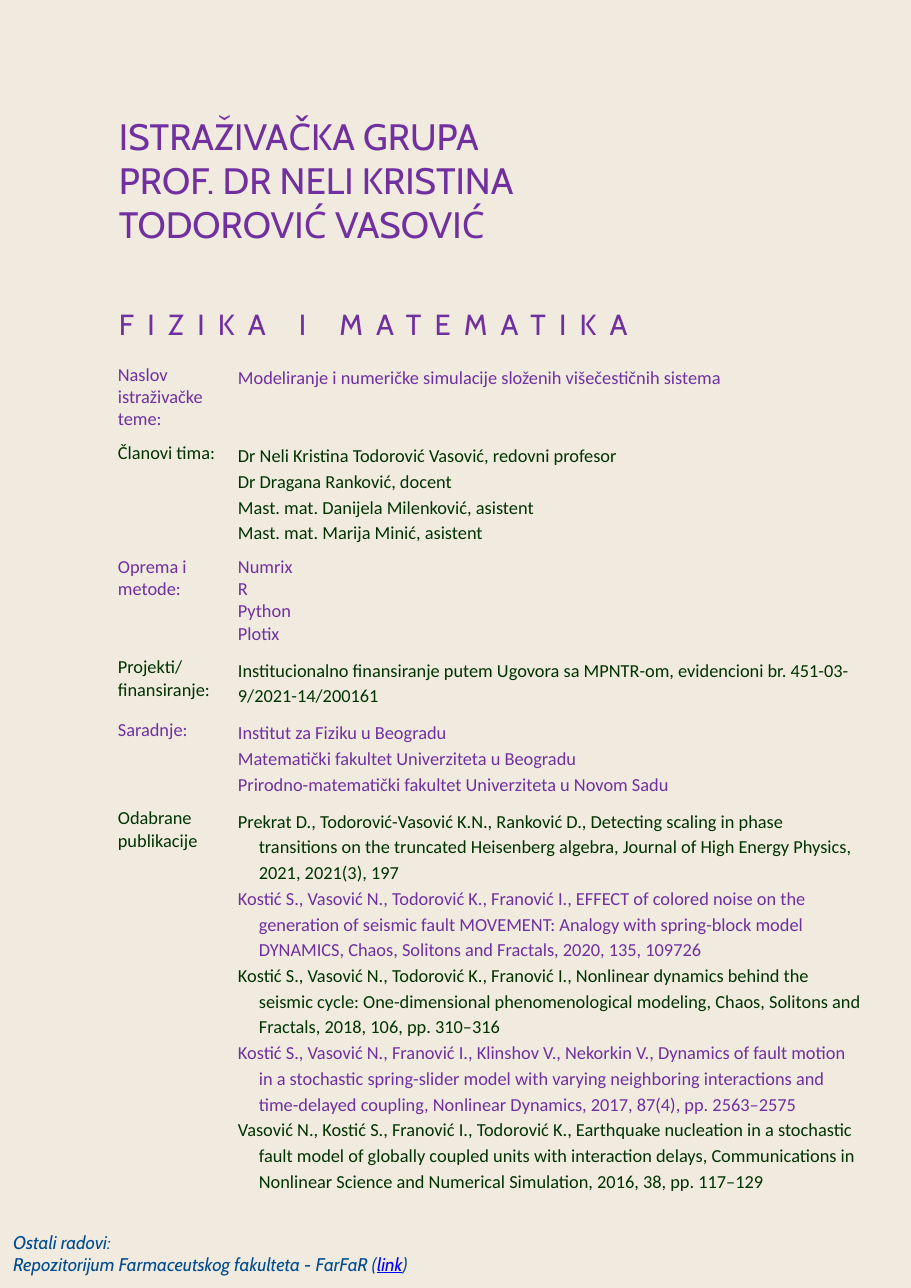
import pptx
import pptx.util
import pptx.enum.text
import pptx.dml.color
import pptx.oxml.ns
from lxml import etree

Inches = pptx.util.Inches
Pt = pptx.util.Pt
COLORS = {"paper": "F0EADF", "violet": "7030A0", "green": "003300",
          "blue": "024C90", "link": "0000FF"}
NO_GRID = "{2D5ABB26-0587-4C30-8999-92F81FD0307C}"


def style(para, size, face, color, slant=False):
    para.alignment = pptx.enum.text.PP_ALIGN.LEFT
    para.space_before = Pt(0)
    for run in para.runs:
        run.font.size = Pt(size)
        run.font.name = face
        run.font.italic = slant
        run.font.color.rgb = pptx.dml.color.RGBColor.from_string(COLORS[color])


def place(shape, left, top, width, height):
    shape.left, shape.top = Inches(left), Inches(top)
    shape.width, shape.height = Inches(width), Inches(height)
    frame = shape.text_frame
    frame.word_wrap = True
    frame.auto_size = pptx.enum.text.MSO_AUTO_SIZE.NONE
    frame.vertical_anchor = pptx.enum.text.MSO_ANCHOR.MIDDLE
    frame.margin_left = frame.margin_right = Inches(0.06)
    frame.margin_top = frame.margin_bottom = Inches(0.06)
    return frame


deck = pptx.Presentation()
deck.slide_width, deck.slide_height = Inches(8.27), Inches(11.69)
slide = deck.slides.add_slide(deck.slide_layouts[1])
back = slide.background.fill
back.solid()
back.fore_color.rgb = pptx.dml.color.RGBColor.from_string(COLORS["paper"])

title = place(slide.shapes.title, 1.02, 0.97, 4.3, 1.32)
title.text = "ISTRAŽIVAČKA GRUPA\vPROF. DR NELI KRISTINA\vTODOROVIĆ VASOVIĆ"
style(title.paragraphs[0], 24, "Cabin", "violet")

field = place(slide.placeholders[1], 1.02, 2.72, 5.22, 0.43)
field.text = "FIZIKA I MATEMATIKA"
para = field.paragraphs[0]
props = para._p.get_or_add_pPr()
props.set("marL", "0")
props.set("indent", "0")
etree.SubElement(props, pptx.oxml.ns.qn("a:buNone"))
style(para, 19, "Cabin", "violet")
para.runs[0]._r.get_or_add_rPr().set("spc", "870")

papers = [
    "Prekrat D., Todorović-Vasović K.N., Ranković D., Detecting scaling in phase transitions on the truncated Heisenberg algebra, Journal of High Energy Physics, 2021, 2021(3), 197",
    "Kostić S., Vasović N., Todorović K., Franović I., EFFECT of colored noise on the generation of seismic fault MOVEMENT: Analogy with spring-block model DYNAMICS, Chaos, Solitons and Fractals, 2020, 135, 109726",
    "Kostić S., Vasović N., Todorović K., Franović I., Nonlinear dynamics behind the seismic cycle: One-dimensional phenomenological modeling, Chaos, Solitons and Fractals, 2018, 106, pp. 310–316",
    "Kostić S., Vasović N., Franović I., Klinshov V., Nekorkin V., Dynamics of fault motion in a stochastic spring-slider model with varying neighboring interactions and time-delayed coupling, Nonlinear Dynamics, 2017, 87(4), pp. 2563–2575",
    "Vasović N., Kostić S., Franović I., Todorović K., Earthquake nucleation in a stochastic fault model of globally coupled units with interaction delays, Communications in Nonlinear Science and Numerical Simulation, 2016, 38, pp. 117–129",
]
rows = [
    ("Naslov istraživačke teme:", 0.71, 1.15,
     ["Modeliranje i numeričke simulacije složenih višečestičnih sistema"]),
    ("Članovi tima:", 1.03, 1.15,
     ["Dr Neli Kristina Todorović Vasović, redovni profesor",
      "Dr Dragana Ranković, docent",
      "Mast. mat. Danijela Milenković, asistent",
      "Mast. mat. Marija Minić, asistent"]),
    ("Oprema i metode:", 0.91, 1.0, ["Numrix", "R", "Python", "Plotix"]),
    ("Projekti/ finansiranje:", 0.57, 1.15,
     ["Institucionalno finansiranje putem Ugovora sa MPNTR-om, evidencioni br. 451-03-9/2021-14/200161"]),
    ("Saradnje:", 0.8, 1.15,
     ["Institut za Fiziku u Beogradu",
      "Matematički fakultet Univerziteta u Beogradu",
      "Prirodno-matematički fakultet Univerziteta u Novom Sadu"]),
    ("Odabrane publikacije", 3.6, 1.15, papers),
]
high = sum(row[1] for row in rows)
table = slide.shapes.add_table(len(rows), 2, Inches(1.02), Inches(3.25),
                               Inches(6.87), Inches(high)).table
table.first_row = table.horz_banding = False
table._tbl.tblPr.find(pptx.oxml.ns.qn("a:tableStyleId")).text = NO_GRID
table.columns[0].width, table.columns[1].width = Inches(1.09), Inches(5.78)

tones = ["violet", "green"]
for r, (label, tall, lead, lines) in enumerate(rows):
    table.rows[r].height = Inches(tall)
    for c, text in enumerate([label, "\n".join(lines)]):
        cell = table.cell(r, c)
        cell.fill.background()
        cell.margin_left = cell.margin_right = Inches(0.05)
        cell.margin_top = cell.margin_bottom = Inches(0.05)
        cell.text_frame.text = text
        for n, para in enumerate(cell.text_frame.paragraphs):
            cited = c == 1 and lines is papers
            if cited:
                props = para._p.get_or_add_pPr()
                props.set("marL", str(Inches(0.19)))
                props.set("indent", str(-Inches(0.19)))
            style(para, 12, "Calibri", tones[(r + n * cited) % 2])
            if c == 1:
                para.line_spacing = lead

foot = place(slide.shapes.add_textbox(0, 0, 0, 0), 0.06, 11.11, 4.3, 0.52)
para = foot.paragraphs[0]
para.text = "Ostali radovi:\vRepozitorijum Farmaceutskog fakulteta - FarFaR ("
link = para.add_run()
link.text = "link"
para.add_run().text = ")"
style(para, 12, "Cabin", "blue", True)
link.font.underline = True
link.font.color.rgb = pptx.dml.color.RGBColor.from_string(COLORS["link"])

deck.save("out.pptx")
